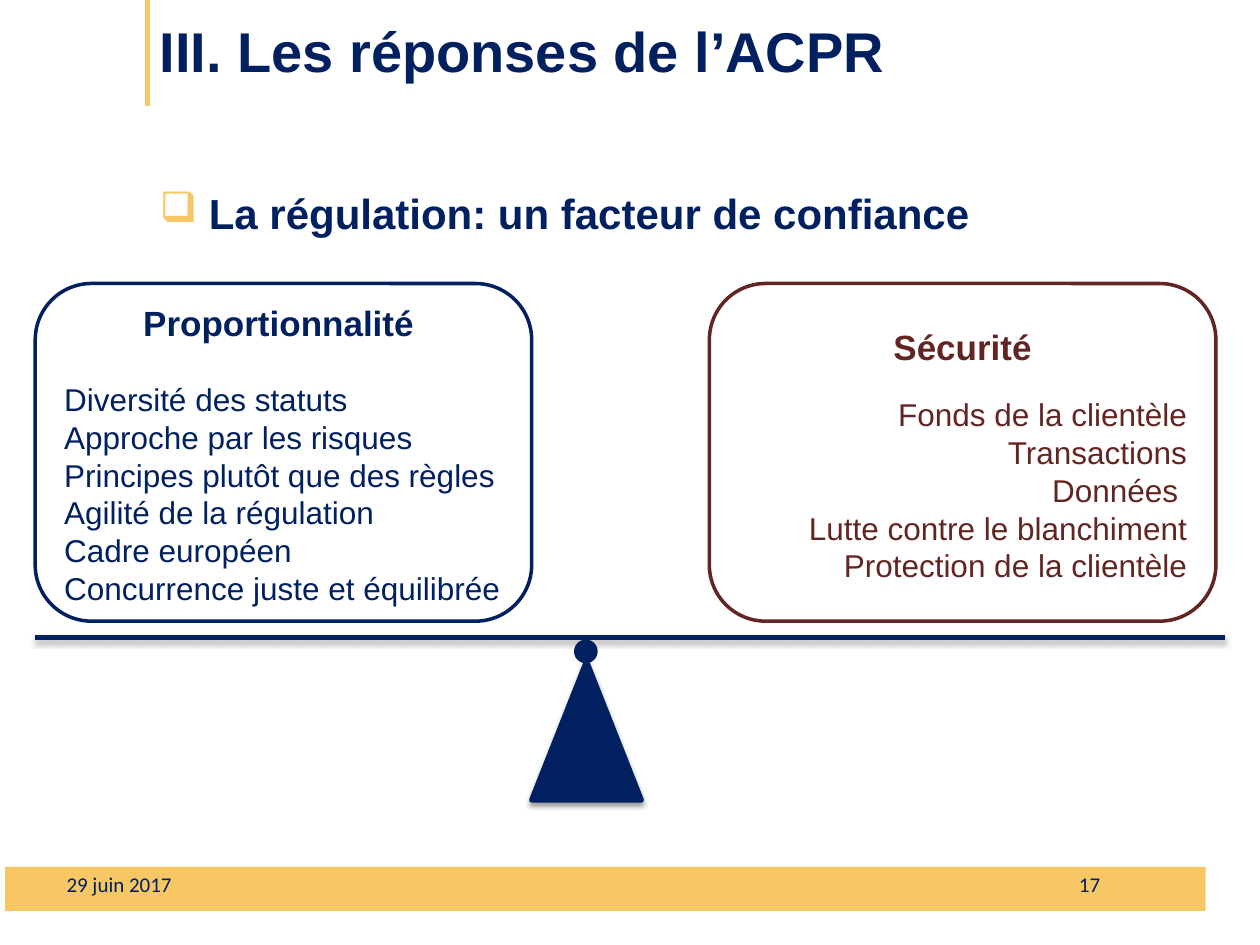
from lxml import etree
from pptx import Presentation
from pptx.dml.color import RGBColor
from pptx.enum.shapes import MSO_CONNECTOR, MSO_SHAPE
from pptx.enum.text import MSO_ANCHOR, PP_ALIGN
from pptx.oxml.ns import qn
from pptx.util import Inches, Pt

LEFT, CENTER, RIGHT = PP_ALIGN.LEFT, PP_ALIGN.CENTER, PP_ALIGN.RIGHT
TOP, MIDDLE = MSO_ANCHOR.TOP, MSO_ANCHOR.MIDDLE
COLORS = {"navy": "002060", "gold": "F7C765", "maroon": "632523",
          "white": "FFFFFF", "black": "000000"}

# Content
TITLE = "III. Les réponses de l’ACPR"
SUBTITLE = " La régulation: un facteur de confiance"
DATE, PAGE_NUMBER = "29 juin 2017", "17"
PANS = [
    {"at": (0.28, 2.25, 3.94, 2.68), "color": "navy", "align": LEFT,
     "inset": 0.01, "gap": 21, "heading": "Proportionnalité ",
     "items": ["Diversité des statuts", "Approche par les risques",
               "Principes plutôt que des règles", "Agilité de la régulation",
               "Cadre européen", "Concurrence juste et équilibrée"]},
    {"at": (5.63, 2.25, 4.02, 2.68), "color": "maroon", "align": RIGHT,
     "inset": 0.2, "gap": 16, "heading": "Sécurité",
     "items": ["Fonds de la clientèle", "Transactions", "Données ",
               "Lutte contre le blanchiment", "Protection de la clientèle"]},
]


def rgb(name):
    return RGBColor.from_string(COLORS[name])


def set_effects(shape, shadow_alpha=None):
    """Remove the theme shadow, or put a soft downward one in its place."""
    effects = etree.SubElement(shape._element.spPr, qn("a:effectLst"))
    if shadow_alpha:
        outer = etree.SubElement(effects, qn("a:outerShdw"), blurRad=str(Pt(3.1)),
                                 dist=str(Pt(1.7)), dir="5400000", rotWithShape="0")
        color = etree.SubElement(outer, qn("a:srgbClr"), val=COLORS["black"])
        etree.SubElement(color, qn("a:alpha"), val=str(shadow_alpha * 1000))


def add_line(page, start, end, color, width, shadow_alpha=None):
    line = page.shapes.add_connector(MSO_CONNECTOR.STRAIGHT,
                                     *map(Inches, start + end))
    line.line.color.rgb = rgb(color)
    line.line.width = Pt(width)
    set_effects(line, shadow_alpha)


def add_shape(page, kind, at, fill, line=None, width=0, shadow_alpha=None):
    shape = page.shapes.add_shape(kind, *map(Inches, at))
    shape.fill.solid()
    shape.fill.fore_color.rgb = rgb(fill)
    if line:
        shape.line.color.rgb = rgb(line)
        shape.line.width = Pt(width)
    else:
        shape.line.fill.background()
    set_effects(shape, shadow_alpha)
    return shape


def write(para, text, size, color, bold=False, align=LEFT, font="Arial"):
    para.alignment = align
    span = para.add_run()
    span.text = text
    span.font.name = font
    span.font.size = Pt(size)
    span.font.bold = bold
    span.font.color.rgb = rgb(color)


def add_text_box(page, at, anchor):
    frame = page.shapes.add_textbox(*map(Inches, at)).text_frame
    frame.word_wrap = True
    frame.vertical_anchor = anchor
    return frame.paragraphs[0]


def add_pan(page, pan):
    box = add_shape(page, MSO_SHAPE.ROUNDED_RECTANGLE, pan["at"],
                    "white", pan["color"], 2)
    frame = box.text_frame
    frame.word_wrap = True
    frame.vertical_anchor = TOP
    frame.margin_top, frame.margin_bottom = Inches(pan["inset"]), 0
    heading = frame.paragraphs[0]
    heading.line_spacing = Pt(24)
    write(heading, pan["heading"], 20, pan["color"], True, CENTER)
    for index, item in enumerate(pan["items"]):
        para = frame.add_paragraph()
        para.line_spacing = Pt(21.6)
        if index == 0:
            para.space_before = Pt(pan["gap"])
        write(para, item, 18, pan["color"], align=pan["align"])


def add_bullet(para, symbol, color, indent):
    properties = para._p.get_or_add_pPr()
    properties.set("marL", str(Inches(indent)))
    properties.set("indent", str(-Inches(indent)))
    bullet_color = etree.SubElement(properties, qn("a:buClr"))
    etree.SubElement(bullet_color, qn("a:srgbClr"), val=COLORS[color])
    etree.SubElement(properties, qn("a:buChar"), char=symbol)


def main():
    deck = Presentation()
    deck.slide_width, deck.slide_height = Inches(10), Inches(7.5)
    page = deck.slides.add_slide(deck.slide_layouts[6])

    # Footer band and title rule
    add_shape(page, MSO_SHAPE.RECTANGLE, (0.04, 6.88, 9.53, 0.35), "gold")
    add_line(page, (1.17, 0), (1.17, 0.84), "gold", 2.75)
    write(add_text_box(page, (0.43, 6.82, 4.33, 0.4), MIDDLE),
          DATE, 12, "navy", font="Calibri")
    write(add_text_box(page, (6.5, 6.82, 2.33, 0.4), MIDDLE),
          PAGE_NUMBER, 12, "navy", align=RIGHT, font="Calibri")

    # Scale: beam, pivot and stand
    add_line(page, (0.28, 5.06), (9.72, 5.06), "navy", 3, 35)
    add_shape(page, MSO_SHAPE.FLOWCHART_CONNECTOR, (4.57, 5.09, 0.16, 0.16),
              "navy", "navy", 2)
    add_shape(page, MSO_SHAPE.FLOWCHART_EXTRACT, (4.22, 5.25, 0.87, 1.1),
              "navy", "navy", 3, 38)

    # The two sides being weighed
    for pan in PANS:
        add_pan(page, pan)

    # Headings
    subtitle = add_text_box(page, (1.17, 1.44, 7.24, 0.58), TOP)
    add_bullet(subtitle, "❑", "gold", 0.29)
    write(subtitle, SUBTITLE, 24, "navy", True)
    write(add_text_box(page, (1.17, -0.03, 8.63, 0.86), MIDDLE),
          TITLE, 32, "navy", True)

    deck.save("out.pptx")


if __name__ == "__main__":
    main()
